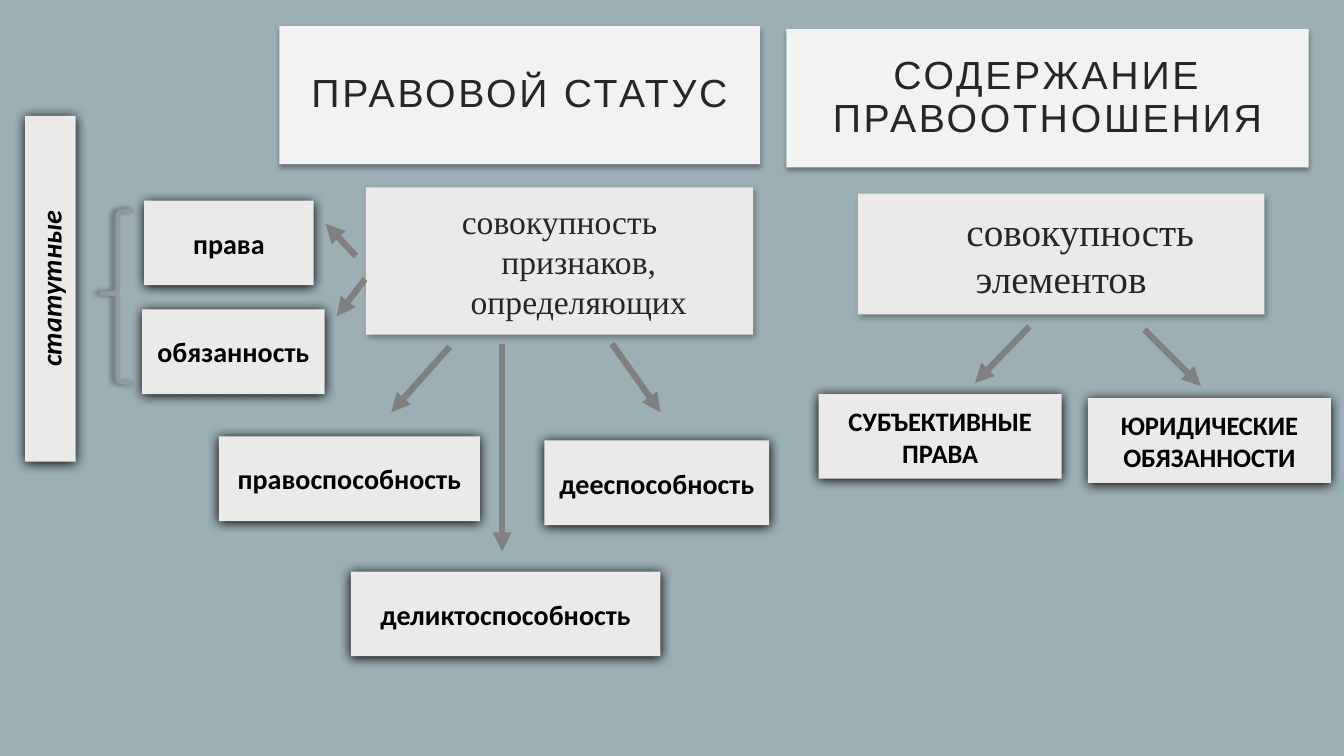
import pptx
import pptx.util
import pptx.dml.color
import pptx.enum.shapes
import pptx.enum.text
import pptx.oxml
import pptx.oxml.ns
from dataclasses import dataclass

Inches, Pt = pptx.util.Inches, pptx.util.Pt
qn = pptx.oxml.ns.qn
SHAPES = pptx.enum.shapes.MSO_SHAPE

# Headings and definitions: paragraphs with first-line indent, then left, top, width, height
HEADINGS = [
    ("ПРАВОВОЙ СТАТУС", (2.77, 0.26, 4.77, 1.37)),
    ("СОДЕРЖАНИЕ ПРАВООТНОШЕНИЯ", (7.8, 0.29, 5.18, 1.37)),
]
DEFINITIONS = [
    ([("совокупность", 0), ("признаков,", 0.38), ("определяющих", 0.38)],
     24, (3.63, 1.86, 3.84, 1.46)),
    ([("совокупность элементов", 0.38)], 28, (8.51, 1.92, 4.03, 1.2)),
]
# Elements: text, left, top, width
STATUS_ELEMENTS = [
    ("права", 1.43, 1.99, 1.68),
    ("обязанность", 1.41, 3.07, 1.81),
    ("правоспособность", 2.17, 4.33, 2.59),
    ("дееспособность", 5.4, 4.37, 2.23),
    ("деликтоспособность", 3.48, 5.67, 3.07),
]
RELATION_ELEMENTS = [
    ("СУБЪЕКТИВНЫЕ ПРАВА", 8.12, 3.91, 2.41),
    ("ЮРИДИЧЕСКИЕ ОБЯЗАННОСТИ", 10.79, 3.95, 2.41),
]
ELEMENT_HEIGHT = 0.84
STATUTORY = ("статутные", (0.25, 1.15, 0.5, 3.43))
BRACE = (1.01, 2.09, 0.32, 1.71)
# Arrows: start x, start y, end x, end y
ARROWS = [
    (3.53, 2.54, 3.23, 2.22),
    (3.62, 2.77, 3.34, 3.14),
    (4.46, 3.44, 3.88, 4.09),
    (4.98, 3.41, 4.98, 5.47),
    (6.07, 3.41, 6.55, 4.09),
    (10.21, 3.24, 9.67, 3.8),
    (11.35, 3.27, 11.91, 3.83),
]


@dataclass(frozen=True)
class Theme:
    background: str = "9BAFB5"
    heading_fill: str = "F2F2F2"
    box_fill: str = "ECEAE8"
    dark_text: str = "262626"
    black: str = "000000"
    arrow: str = "808080"
    brace: str = "8E9A9E"
    heading_size: int = 28
    status_size: int = 20
    relation_size: int = 19
    # Shadows: opacity %, blur pt, distance pt, direction in degrees
    heading_shadow: tuple = (32, 3.5, 2.2, 90)
    definition_shadow: tuple = (30, 4.5, 2.6, 53)
    element_shadow: tuple = (100, 8.5, 1, 90)
    brace_shadow: tuple = (40, 4, 3, 180)


THEME = Theme()


def rgb(value):
    return pptx.dml.color.RGBColor.from_string(value)


def cast_shadow(shape, opacity, blur, distance, direction):
    shape.shadow.inherit = False
    effects = shape._element.spPr.find(qn("a:effectLst"))
    effects.append(pptx.oxml.parse_xml(
        f'<a:outerShdw {pptx.oxml.ns.nsdecls("a")} blurRad="{Pt(blur)}" dist="{Pt(distance)}" '
        f'dir="{direction * 60000}" algn="ctr" rotWithShape="0">'
        f'<a:srgbClr val="{THEME.black}"><a:alpha val="{opacity * 1000}"/></a:srgbClr>'
        f'</a:outerShdw>'))


def write(paragraph, text, *, font, size, color, bold=False, italic=False,
          spacing=0, indent=0, line_spacing=None):
    paragraph.alignment = pptx.enum.text.PP_ALIGN.CENTER
    paragraph.line_spacing = line_spacing
    properties = paragraph._p.get_or_add_pPr()
    properties.set("marL", "0")
    properties.set("indent", str(Inches(indent)))
    run = paragraph.add_run()
    run.text = text
    run.font.name, run.font.size = font, Pt(size)
    run.font.bold, run.font.italic = bold, italic
    run.font.color.rgb = rgb(color)
    if spacing:
        run._r.get_or_add_rPr().set("spc", str(spacing * 100))


def add_box(slide, paragraphs, place, *, fill, shadow, insets=(0.1, 0.05),
            vertical=False, **text_format):
    """Add a shadowed rectangle; paragraphs are (text, first-line indent) pairs."""
    box = slide.shapes.add_shape(SHAPES.RECTANGLE, *map(Inches, place))
    box.fill.solid()
    box.fill.fore_color.rgb = rgb(fill)
    box.line.fill.background()
    cast_shadow(box, *shadow)
    frame = box.text_frame
    frame.word_wrap = True
    frame.vertical_anchor = pptx.enum.text.MSO_ANCHOR.MIDDLE
    frame.margin_left = frame.margin_right = Inches(insets[0])
    frame.margin_top = frame.margin_bottom = Inches(insets[1])
    if vertical:
        frame._txBody.bodyPr.set("vert", "vert270")
    for index, (text, indent) in enumerate(paragraphs):
        paragraph = frame.add_paragraph() if index else frame.paragraphs[0]
        write(paragraph, text, indent=indent, **text_format)


def add_element(slide, text, place, size, **options):
    add_box(slide, [(text, 0)], place, fill=THEME.box_fill, shadow=THEME.element_shadow,
            font="Calibri", size=size, color=THEME.black, bold=True, **options)


def add_arrow(slide, ends):
    arrow = slide.shapes.add_connector(
        pptx.enum.shapes.MSO_CONNECTOR.STRAIGHT, *map(Inches, ends))
    arrow.line.color.rgb = rgb(THEME.arrow)
    arrow.line.width = Pt(4.5)
    arrow.line._get_or_add_ln().append(pptx.oxml.parse_xml(
        f'<a:tailEnd {pptx.oxml.ns.nsdecls("a")} type="triangle"/>'))
    arrow._element.spPr.append(pptx.oxml.parse_xml(
        f'<a:effectLst {pptx.oxml.ns.nsdecls("a")}/>'))


def add_brace(slide):
    brace = slide.shapes.add_shape(SHAPES.LEFT_BRACE, *map(Inches, BRACE))
    brace.adjustments[0], brace.adjustments[1] = 0.08, 0.48
    brace.fill.background()
    brace.line.color.rgb = rgb(THEME.brace)
    brace.line.width = Pt(3)
    cast_shadow(brace, *THEME.brace_shadow)


def main():
    deck = pptx.Presentation()
    deck.slide_width, deck.slide_height = Inches(13.33), Inches(7.5)
    slide = deck.slides.add_slide(deck.slide_layouts[6])
    slide.background.fill.solid()
    slide.background.fill.fore_color.rgb = rgb(THEME.background)

    for heading, place in HEADINGS:
        add_box(slide, [(heading, 0)], place, fill=THEME.heading_fill,
                shadow=THEME.heading_shadow, insets=(0.3, 0.2), font="Arial",
                size=THEME.heading_size, color=THEME.dark_text, spacing=2, line_spacing=0.9)
    for definition, size, place in DEFINITIONS:
        add_box(slide, definition, place, fill=THEME.box_fill,
                shadow=THEME.definition_shadow, font="Times New Roman",
                size=size, color=THEME.dark_text)
    for elements, size in ((STATUS_ELEMENTS, THEME.status_size),
                           (RELATION_ELEMENTS, THEME.relation_size)):
        for text, left, top, width in elements:
            add_element(slide, text, (left, top, width, ELEMENT_HEIGHT), size)
    add_element(slide, *STATUTORY, THEME.status_size, vertical=True, italic=True)
    for ends in ARROWS:
        add_arrow(slide, ends)
    add_brace(slide)
    deck.save("out.pptx")


if __name__ == "__main__":
    main()
